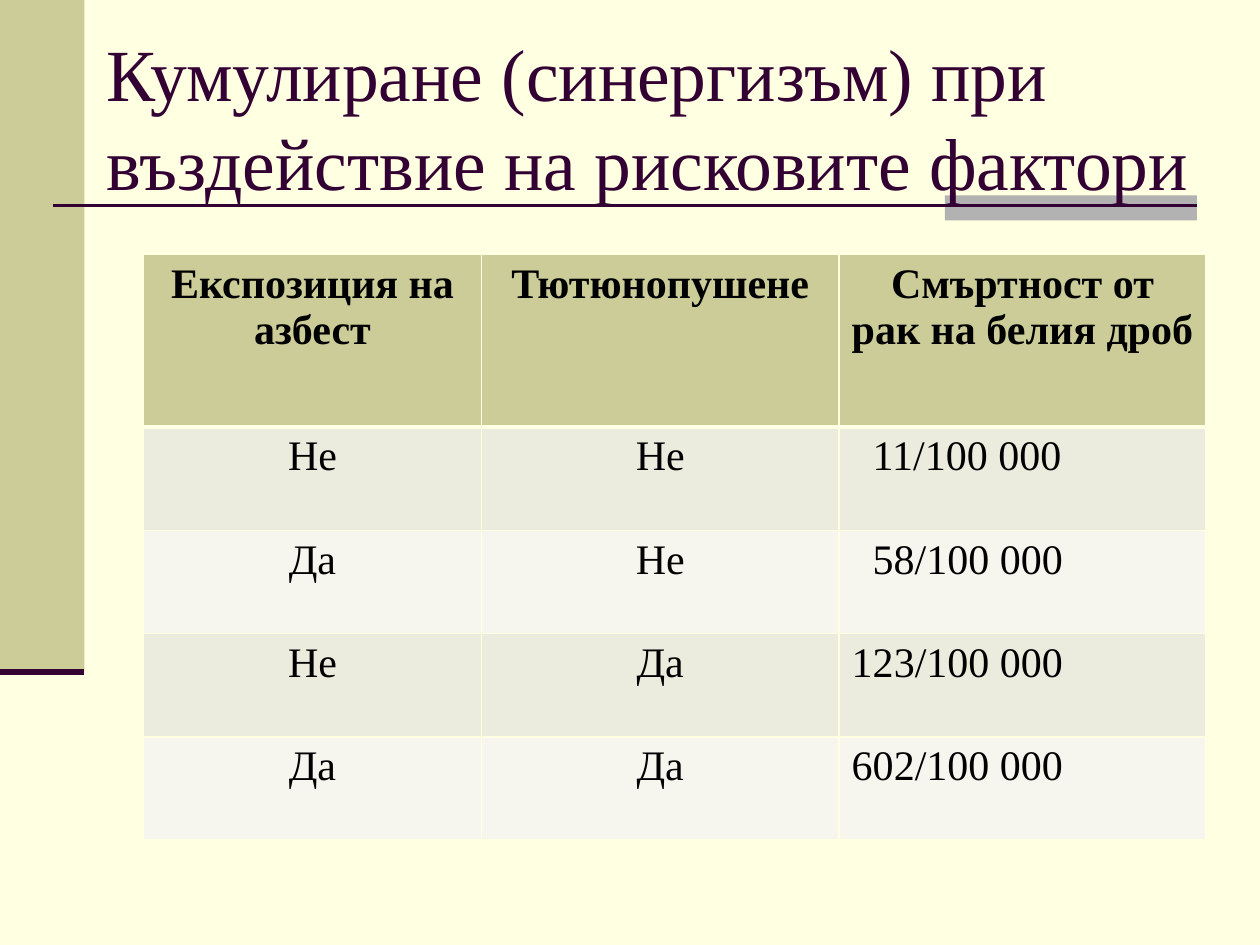
"""Build a slide with a table of lung cancer mortality by asbestos exposure and smoking."""
from dataclasses import dataclass

from lxml.etree import SubElement
from pptx import Presentation
from pptx.dml.color import RGBColor
from pptx.enum.shapes import MSO_CONNECTOR, MSO_SHAPE
from pptx.enum.text import MSO_ANCHOR, PP_ALIGN
from pptx.oxml import parse_xml
from pptx.oxml.ns import nsdecls, qn
from pptx.slide import Slide
from pptx.table import _Cell
from pptx.text.text import _Paragraph
from pptx.util import Inches, Pt


@dataclass(frozen=True)
class Theme:
    font: str = "Times New Roman"
    title_size: float = 42
    table_size: float = 24
    background: str = "FFFFE1"
    accent: str = "330033"
    olive: str = "CCCC99"
    gray: str = "B2B2B2"
    text: str = "000000"
    bands: tuple[str, str] = ("ECECDE", "F6F6EF")
    thin_border: float = 1
    thick_border: float = 3


@dataclass(frozen=True)
class Block:
    left: float
    top: float
    width: float
    height: float
    color: str


@dataclass(frozen=True)
class Rule:
    left: float
    right: float
    y: float
    weight: float


THEME = Theme()
TITLE = "Кумулиране (синергизъм) при въздействие на рисковите фактори"
BLOCKS = (
    Block(0, 0, 0.67, 5.33, THEME.olive),
    Block(7.5, 1.55, 2, 0.2, THEME.gray),
)
RULES = (Rule(0.42, 9.5, 1.63, 1.5), Rule(0, 0.67, 5.33, 3.5))
ROWS = (
    ("Експозиция на азбест", "Тютюнопушене", "Смъртност от рак на белия дроб"),
    ("Не", "Не", "11/100 000"),
    ("Да", "Не", "58/100 000"),
    ("Не", "Да", "123/100 000"),
    ("Да", "Да", "602/100 000"),
)
COLUMN_WIDTHS = (2.68, 2.84, 2.91)
HEADER_HEIGHT, BODY_HEIGHT = 1.37, 0.82
RATE_COLUMN = 2
RATE_DIGITS = 3
DIGIT_WIDTH = THEME.table_size / 72 / 2
CELL_MARGIN = 0.1


def write(paragraph: _Paragraph, text: str, size: float, color: str, bold: bool = False) -> None:
    run = paragraph.add_run()
    run.text = text
    for name, value in {"name": THEME.font, "size": Pt(size), "bold": bold}.items():
        setattr(run.font, name, value)
    run.font.color.rgb = RGBColor.from_string(color)


def draw_block(slide: Slide, block: Block) -> None:
    shape = slide.shapes.add_shape(
        MSO_SHAPE.RECTANGLE, Inches(block.left), Inches(block.top),
        Inches(block.width), Inches(block.height),
    )
    shape.shadow.inherit = False
    shape.fill.solid()
    shape.fill.fore_color.rgb = RGBColor.from_string(block.color)
    shape.line.fill.background()


def draw_rule(slide: Slide, rule: Rule) -> None:
    connector = slide.shapes.add_connector(
        MSO_CONNECTOR.STRAIGHT, Inches(rule.left), Inches(rule.y),
        Inches(rule.right), Inches(rule.y),
    )
    connector.line.color.rgb = RGBColor.from_string(THEME.accent)
    connector.line.width = Pt(rule.weight)
    SubElement(connector._element.spPr, qn("a:effectLst"))


def draw_title(slide: Slide) -> None:
    box = slide.shapes.add_textbox(Inches(0.75), Inches(0.3), Inches(8.9), Inches(1.25))
    frame = box.text_frame
    for name, value in {"word_wrap": True, "vertical_anchor": MSO_ANCHOR.MIDDLE}.items():
        setattr(frame, name, value)
    write(frame.paragraphs[0], TITLE, THEME.title_size, THEME.accent)


def set_borders(cell: _Cell, top: float, bottom: float) -> None:
    properties = cell._tc.get_or_add_tcPr()
    weights = {"lnL": THEME.thin_border, "lnR": THEME.thin_border, "lnT": top, "lnB": bottom}
    for position, (tag, weight) in enumerate(weights.items()):
        properties.insert(position, parse_xml(
            f'<a:{tag} {nsdecls("a")} w="{Pt(weight)}"><a:solidFill>'
            f'<a:srgbClr val="{THEME.background}"/></a:solidFill></a:{tag}>'
        ))


def fill_cell(cell: _Cell, text: str, row: int, column: int) -> None:
    header = row == 0
    rate = column == RATE_COLUMN and not header
    missing_digits = RATE_DIGITS - text.index("/") if rate else 0
    margins = {
        "margin_left": Inches(CELL_MARGIN + missing_digits * DIGIT_WIDTH),
        "margin_right": Inches(CELL_MARGIN),
        "margin_top": Inches(0.05),
        "margin_bottom": Inches(0.05),
    }
    for name, value in margins.items():
        setattr(cell, name, value)
    cell.fill.solid()
    color = THEME.olive if header else THEME.bands[(row - 1) % 2]
    cell.fill.fore_color.rgb = RGBColor.from_string(color)
    set_borders(
        cell,
        THEME.thick_border if row == 1 else THEME.thin_border,
        THEME.thick_border if header else THEME.thin_border,
    )
    paragraph = cell.text_frame.paragraphs[0]
    paragraph.alignment = PP_ALIGN.LEFT if rate else PP_ALIGN.CENTER
    write(paragraph, text, THEME.table_size, THEME.text, header)


def draw_table(slide: Slide) -> None:
    heights = (HEADER_HEIGHT,) + (BODY_HEIGHT,) * (len(ROWS) - 1)
    table = slide.shapes.add_table(
        len(ROWS), len(COLUMN_WIDTHS), Inches(1.14), Inches(2.02),
        Inches(sum(COLUMN_WIDTHS)), Inches(sum(heights)),
    ).table
    for column, width in zip(table.columns, COLUMN_WIDTHS):
        column.width = Inches(width)
    for row, height in zip(table.rows, heights):
        row.height = Inches(height)
    for row_index, texts in enumerate(ROWS):
        for column_index, text in enumerate(texts):
            fill_cell(table.cell(row_index, column_index), text, row_index, column_index)


def main() -> None:
    presentation = Presentation()
    presentation.slide_width, presentation.slide_height = Inches(10), Inches(7.5)
    slide = presentation.slides.add_slide(presentation.slide_layouts[6])
    slide.background.fill.solid()
    slide.background.fill.fore_color.rgb = RGBColor.from_string(THEME.background)
    for block in BLOCKS:
        draw_block(slide, block)
    for rule in RULES:
        draw_rule(slide, rule)
    draw_title(slide)
    draw_table(slide)
    presentation.save("out.pptx")


if __name__ == "__main__":
    main()
